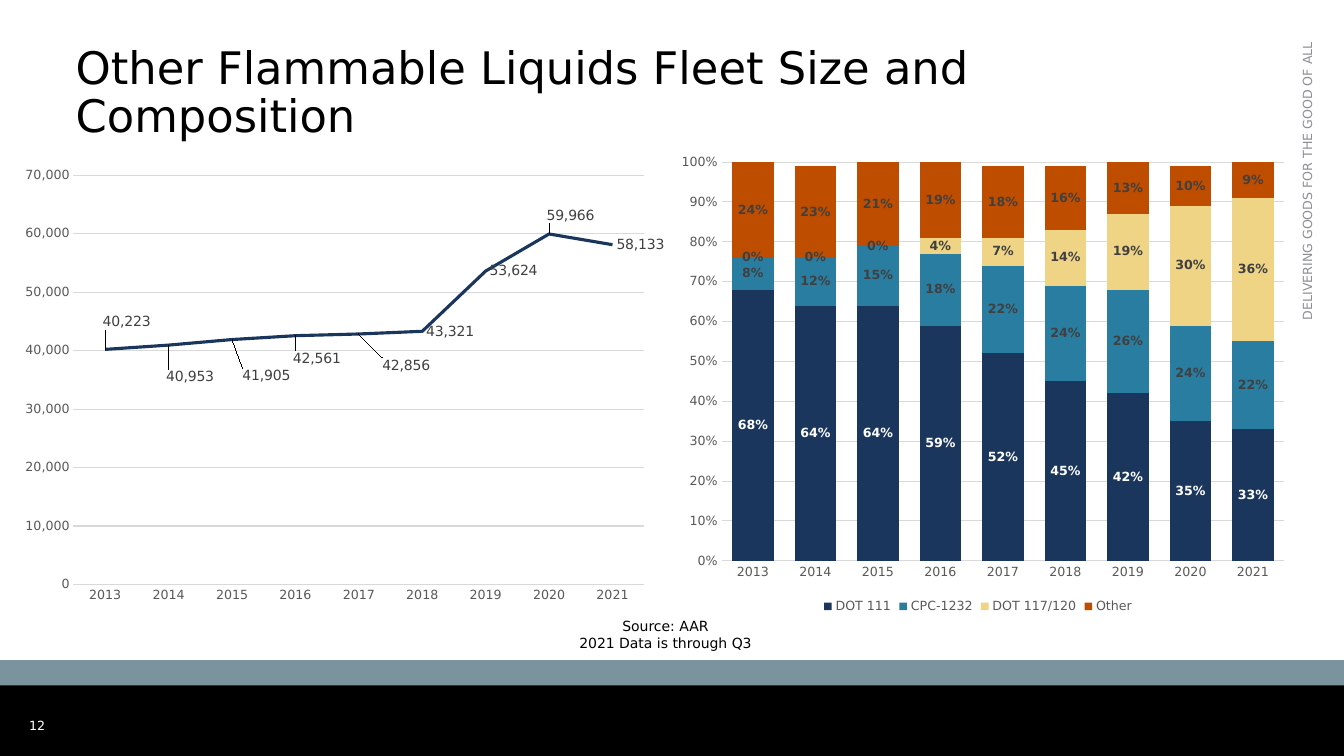
from lxml.etree import SubElement
from pptx import Presentation
from pptx.chart.data import CategoryChartData
from pptx.dml.color import RGBColor
from pptx.enum.chart import XL_CHART_TYPE, XL_LABEL_POSITION, XL_LEGEND_POSITION
from pptx.enum.chart import XL_MARKER_STYLE, XL_TICK_MARK
from pptx.enum.shapes import MSO_SHAPE
from pptx.enum.text import MSO_ANCHOR, MSO_AUTO_SIZE, PP_ALIGN
from pptx.oxml import parse_xml
from pptx.oxml.ns import nsdecls, qn
from pptx.util import Inches, Pt

BLACK = RGBColor(0x00, 0x00, 0x00)
WHITE = RGBColor(0xFF, 0xFF, 0xFF)
NAVY = RGBColor(0x1B, 0x36, 0x5D)
TEAL = RGBColor(0x28, 0x7D, 0xA1)
SAND = RGBColor(0xEE, 0xD4, 0x84)
RUST = RGBColor(0xBE, 0x4D, 0x00)
SLATE = RGBColor(0x7A, 0x93, 0x9C)
MOTTO = RGBColor(0x8D, 0x90, 0x93)
GRID = RGBColor(0xD9, 0xD9, 0xD9)
AXIS = RGBColor(0x59, 0x59, 0x59)
LABEL = RGBColor(0x40, 0x40, 0x40)

YEARS = [str(year) for year in range(2013, 2022)]
FLEET = [40223, 40953, 41905, 42561, 42856, 43321, 53624, 59966, 58133]
SHIFTS = {0: (-0.01, -0.06), 1: (-0.01, 0.07), 2: (0.01, 0.08),
          3: (-0.01, 0.05), 4: (0.03, 0.07), 7: (-0.01, -0.04)}
SHARES = [
    ("DOT 111", NAVY, WHITE, [0.68, 0.64, 0.64, 0.59, 0.52, 0.45, 0.42, 0.35, 0.33]),
    ("CPC-1232", TEAL, LABEL, [0.08, 0.12, 0.15, 0.18, 0.22, 0.24, 0.26, 0.24, 0.22]),
    ("DOT 117/120", SAND, LABEL, [0, 0, 0, 0.04, 0.07, 0.14, 0.19, 0.3, 0.36]),
    ("Other", RUST, LABEL, [0.24, 0.23, 0.21, 0.19, 0.18, 0.16, 0.13, 0.1, 0.09]),
]


class Deck:
    face = "DejaVu Sans"

    def __init__(self):
        self.show = Presentation()
        self.show.slide_width = Inches(13.33)
        self.show.slide_height = Inches(7.5)
        self.slide = self.show.slides.add_slide(self.show.slide_layouts[5])

    def put(self, item, **values):
        for name, value in values.items():
            setattr(item, name, value)

    def style(self, font, size, color, bold=False):
        self.put(font, name=self.face, size=Pt(size), bold=bold)
        font.color.rgb = color

    def fill_in(self, frame, lines, size, color, align, anchor=MSO_ANCHOR.TOP, space=None):
        self.put(frame, word_wrap=True, vertical_anchor=anchor, auto_size=MSO_AUTO_SIZE.NONE)
        for spot, line in enumerate(lines):
            para = frame.add_paragraph() if spot else frame.paragraphs[0]
            self.put(para, text=line, alignment=align, line_spacing=space)
            self.style(para.runs[0].font, size, color)

    def title(self, text, box):
        head = self.slide.shapes.title
        self.put(head, **dict(zip(("left", "top", "width", "height"), map(Inches, box))))
        self.fill_in(head.text_frame, [text], 32, BLACK, PP_ALIGN.LEFT, space=0.9)

    def text(self, lines, box, size, color, align, anchor=MSO_ANCHOR.TOP, turn=None):
        frame = self.slide.shapes.add_textbox(*map(Inches, box)).text_frame
        self.fill_in(frame, lines, size, color, align, anchor)
        if turn:
            frame._txBody.bodyPr.set("vert", turn)

    def band(self, box, color):
        shape = self.slide.shapes.add_shape(MSO_SHAPE.RECTANGLE, *map(Inches, box))
        shape.shadow.inherit = False
        shape.fill.solid()
        shape.fill.fore_color.rgb = color
        shape.line.fill.background()

    def chart(self, kind, rows, box, plot, form, top, step):
        data = CategoryChartData(number_format=form)
        data.categories = YEARS
        for name, values in rows:
            data.add_series(name, values)
        chart = self.slide.shapes.add_chart(kind, *map(Inches, box), data).chart
        self.put(chart, has_title=False, has_legend=False)
        self.style(chart.font, 10, BLACK)
        for axis in (chart.category_axis, chart.value_axis):
            self.put(axis, major_tick_mark=XL_TICK_MARK.NONE, minor_tick_mark=XL_TICK_MARK.NONE)
            self.style(axis.tick_labels.font, 9, AXIS)
        scale = chart.value_axis
        self.put(scale, minimum_scale=0, maximum_scale=top, major_unit=step,
                 has_major_gridlines=True)
        self.put(scale.tick_labels, number_format=form, number_format_is_linked=False)
        scale.format.line.fill.background()
        for line in (chart.category_axis.format.line, scale.major_gridlines.format.line):
            line.color.rgb = GRID
            line.width = Pt(0.75)
        area = chart._chartSpace.chart.plotArea
        for old in area.findall(qn("c:layout")):
            area.remove(old)
        area.insert(0, self.layout(plot, True))
        return chart

    def layout(self, spots, inner=False):
        root = parse_xml(f"<c:layout {nsdecls('c')}/>")
        hand = SubElement(root, qn("c:manualLayout"))
        rules = [("layoutTarget", "inner"), ("xMode", "edge"), ("yMode", "edge")] if inner else []
        for tag, value in rules + list(zip("xywh", spots)):
            SubElement(hand, qn("c:" + tag)).set("val", str(value))
        return root

    def labels(self, row, form, size, color, place, bold=False):
        marks = row.data_labels
        self.put(marks, show_value=True, number_format=form,
                 number_format_is_linked=False, position=place)
        self.style(marks.font, size, color, bold)

    def trend(self, box, plot):
        form = "#,##0"
        chart = self.chart(XL_CHART_TYPE.LINE, [("Series 1", FLEET)], box, plot,
                           form, 70000, 10000)
        row = chart.plots[0].series[0]
        row.smooth = False
        row.marker.style = XL_MARKER_STYLE.NONE
        row.format.line.color.rgb = NAVY
        row.format.line.width = Pt(2.25)
        self.labels(row, form, 10, LABEL, XL_LABEL_POSITION.RIGHT)
        for spot in SHIFTS:
            mark = row.points[spot].data_label
            self.style(mark.font, 10, LABEL)
            mark.position = XL_LABEL_POSITION.RIGHT
        for mark, shift in zip(row._element.iter(qn("c:dLbl")), SHIFTS.values()):
            mark.insert(1, self.layout(shift))

    def stack(self, box, plot):
        rows = [(name, values) for name, _, _, values in SHARES]
        chart = self.chart(XL_CHART_TYPE.COLUMN_STACKED, rows, box, plot, "0%", 1, 0.1)
        bars = chart.plots[0]
        self.put(bars, gap_width=50, overlap=100, vary_by_categories=False)
        for row, (_, color, ink, _) in zip(bars.series, SHARES):
            row.format.fill.solid()
            row.format.fill.fore_color.rgb = color
            self.labels(row, "0%", 9, ink, XL_LABEL_POSITION.CENTER, True)
        chart.has_legend = True
        self.put(chart.legend, position=XL_LEGEND_POSITION.BOTTOM, include_in_layout=False)
        self.style(chart.legend.font, 9, AXIS)


def main():
    deck = Deck()
    deck.text(["DELIVERING GOODS FOR THE GOOD OF ALL"], (12.84, 0.32, 0.35, 3.31),
              9, MOTTO, PP_ALIGN.RIGHT, turn="vert270")
    deck.band((0, 6.78, 13.33, 0.72), BLACK)
    deck.band((0, 6.55, 13.33, 0.25), SLATE)
    deck.text(["12"], (0.19, 6.93, 0.58, 0.54), 9, WHITE, PP_ALIGN.LEFT, MSO_ANCHOR.MIDDLE)
    deck.title("Other Flammable Liquids Fleet Size and Composition", (0.65, 0.4, 11.92, 1.02))
    deck.trend((0.15, 1.56, 6.44, 4.51), (0.09, 0.04, 0.88, 0.9))
    deck.stack((6.6, 1.42, 6.2, 4.71), (0.09, 0.04, 0.9, 0.84))
    deck.text(["Source: AAR", "2021 Data is through Q3"], (5.27, 6.08, 2.66, 0.44),
              10, BLACK, PP_ALIGN.CENTER)
    deck.show.save("out.pptx")


if __name__ == "__main__":
    main()
